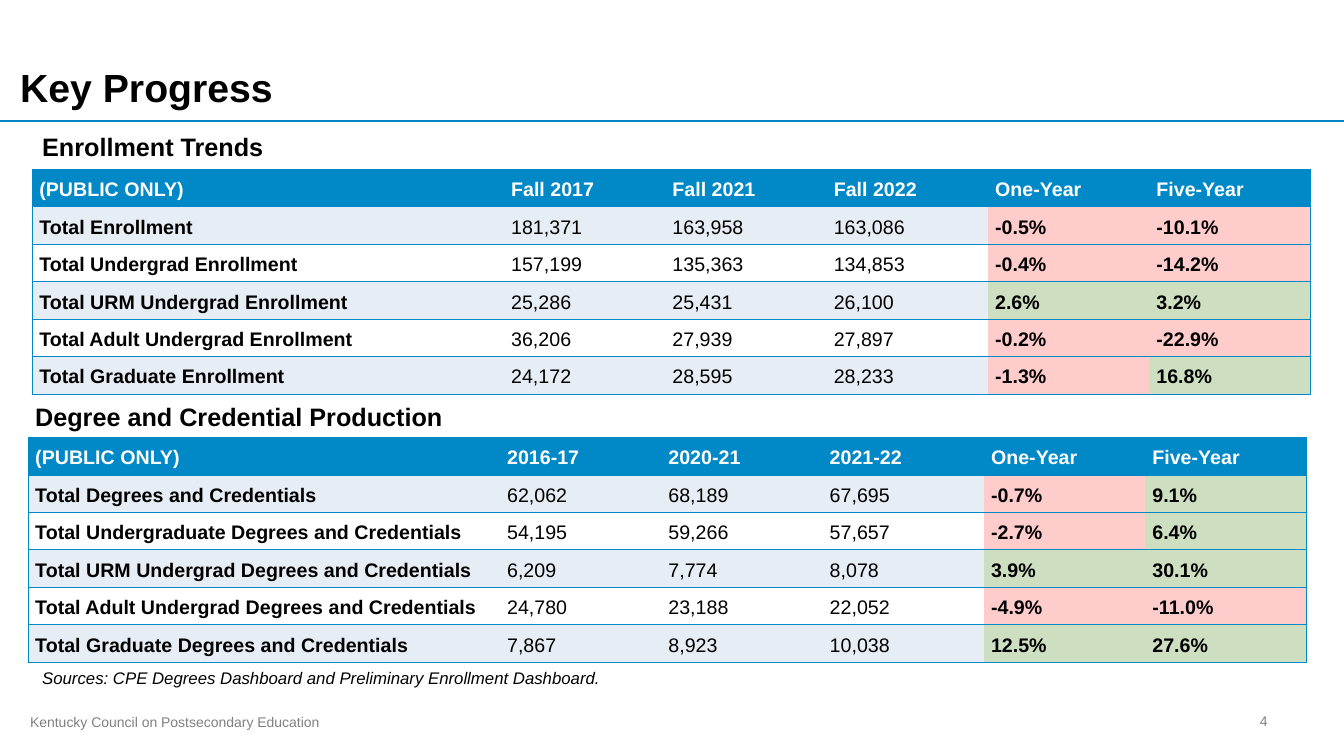
import pptx
import pptx.dml.color
import pptx.enum.shapes
import pptx.enum.text
import pptx.oxml
import pptx.oxml.ns
import pptx.util

Inches = pptx.util.Inches
FONT = "Arial"
SLIDE_WIDTH, SLIDE_HEIGHT = 13.33, 7.5
NO_GRID_STYLE = "{2D5ABB26-0587-4C30-8999-92F81FD0307C}"
COLORS = {
    "rule": "0085C3",
    "header": "0088C7",
    "band": "E7EDF5",
    "plain": "FFFFFF",
    "loss": "FFCCCC",
    "gain": "CEDEC1",
    "text": "000000",
    "header_text": "FFFFFF",
    "footer": "808080",
}
COLUMN_WIDTHS = [4.68] + [1.6] * 5
ROW_HEIGHT = 0.32
CHANGE_COLUMN = 4

ENROLLMENT = [
    ["(PUBLIC ONLY)", "Fall 2017", "Fall 2021", "Fall 2022", "One-Year", "Five-Year"],
    ["Total Enrollment", "181,371", "163,958", "163,086", "-0.5%", "-10.1%"],
    ["Total Undergrad Enrollment", "157,199", "135,363", "134,853", "-0.4%", "-14.2%"],
    ["Total URM Undergrad Enrollment", "25,286", "25,431", "26,100", "2.6%", "3.2%"],
    ["Total Adult Undergrad Enrollment", "36,206", "27,939", "27,897", "-0.2%", "-22.9%"],
    ["Total Graduate Enrollment", "24,172", "28,595", "28,233", "-1.3%", "16.8%"],
]
DEGREES = [
    ["(PUBLIC ONLY)", "2016-17", "2020-21", "2021-22", "One-Year", "Five-Year"],
    ["Total Degrees and Credentials", "62,062", "68,189", "67,695", "-0.7%", "9.1%"],
    ["Total Undergraduate Degrees and Credentials", "54,195", "59,266", "57,657", "-2.7%", "6.4%"],
    ["Total URM Undergrad Degrees and Credentials", "6,209", "7,774", "8,078", "3.9%", "30.1%"],
    ["Total Adult Undergrad Degrees and Credentials", "24,780", "23,188", "22,052", "-4.9%", "-11.0%"],
    ["Total Graduate Degrees and Credentials", "7,867", "8,923", "10,038", "12.5%", "27.6%"],
]


def rgb(name):
    return pptx.dml.color.RGBColor.from_string(COLORS[name])


def add_run(paragraph, text, size, color="text", bold=False, italic=False):
    run = paragraph.add_run()
    run.text = text
    run.font.name = FONT
    run.font.size = pptx.util.Pt(size)
    run.font.bold = bold
    run.font.italic = italic
    run.font.color.rgb = rgb(color)


def add_text(slide, box, text, size, **style):
    shape = slide.shapes.add_textbox(*map(Inches, box))
    shape.text_frame.word_wrap = True
    add_run(shape.text_frame.paragraphs[0], text, size, **style)
    return shape


def add_title(slide, box, text):
    left, top, width, height = box
    title = slide.shapes.title
    title.left, title.top, title.width, title.height = map(Inches, box)
    frame = title.text_frame
    frame.auto_size = pptx.enum.text.MSO_AUTO_SIZE.NONE
    frame.vertical_anchor = pptx.enum.text.MSO_ANCHOR.BOTTOM
    frame.margin_left = frame.margin_right = Inches(0.2)
    frame.margin_top, frame.margin_bottom = Inches(0.05), Inches(0.1)
    paragraph = frame.paragraphs[0]
    paragraph.alignment = pptx.enum.text.PP_ALIGN.LEFT
    add_run(paragraph, text, 28, bold=True)

    bottom = Inches(top + height)
    rule = slide.shapes.add_connector(
        pptx.enum.shapes.MSO_CONNECTOR.STRAIGHT,
        Inches(left), bottom, Inches(left + width), bottom,
    )
    rule.line.color.rgb = rgb("rule")
    rule.line.width = pptx.util.Pt(1.5)
    properties = rule._element.spPr
    properties.append(pptx.oxml.parse_xml(f'<a:effectLst {pptx.oxml.ns.nsdecls("a")}/>'))


def set_borders(cell, sides):
    properties = cell._tc.get_or_add_tcPr()
    for index, side in enumerate(sides):
        properties.insert(index, pptx.oxml.parse_xml(
            f'<a:ln{side} {pptx.oxml.ns.nsdecls("a")} w="12700"><a:solidFill>'
            f'<a:srgbClr val="{COLORS["header"]}"/></a:solidFill></a:ln{side}>'
        ))


def cell_fill(row, column, text):
    if row == 0:
        return "header"
    if column >= CHANGE_COLUMN:
        return "loss" if text.startswith("-") else "gain"
    return "band" if row % 2 else "plain"


def format_cell(cell, row, column, text):
    cell.margin_left = cell.margin_right = Inches(0.07)
    cell.margin_top = cell.margin_bottom = Inches(0.04)
    cell.fill.solid()
    cell.fill.fore_color.rgb = rgb(cell_fill(row, column, text))
    sides = ["T", "B"]
    if column == 0:
        sides.insert(0, "L")
    elif column == len(COLUMN_WIDTHS) - 1:
        sides.insert(0, "R")
    set_borders(cell, sides)
    paragraph = cell.text_frame.paragraphs[0]
    paragraph.line_spacing = 1.25
    add_run(
        paragraph, text, 14,
        color="text" if row else "header_text",
        bold=row == 0 or column == 0 or column >= CHANGE_COLUMN,
    )


def add_trend_table(slide, box, records):
    frame = slide.shapes.add_table(len(records), len(COLUMN_WIDTHS), *map(Inches, box))
    table = frame.table
    table.horz_banding = False
    style = table._tbl.tblPr.find(pptx.oxml.ns.qn("a:tableStyleId"))
    style.text = NO_GRID_STYLE
    for column, width in zip(table.columns, COLUMN_WIDTHS):
        column.width = Inches(width)
    for row_index, record in enumerate(records):
        table.rows[row_index].height = Inches(ROW_HEIGHT)
        for column_index, text in enumerate(record):
            format_cell(table.cell(row_index, column_index), row_index, column_index, text)


def add_footer(slide, box, text, number):
    left, top, width, height = box
    add_text(slide, (left, top + 0.08, 8.5, 0.27), text, 10, color="footer")
    number_width = 0.56
    shape = add_text(
        slide, (left + width - number_width, top, number_width, height),
        number, 10, color="footer",
    )
    shape.text_frame.vertical_anchor = pptx.enum.text.MSO_ANCHOR.MIDDLE
    shape.text_frame.paragraphs[0].alignment = pptx.enum.text.PP_ALIGN.RIGHT


def build_progress_slide(presentation):
    slide = presentation.slides.add_slide(presentation.slide_layouts[5])
    add_title(slide, (0, 0, SLIDE_WIDTH, 1.2), "Key Progress")
    table_size = (sum(COLUMN_WIDTHS), ROW_HEIGHT * len(ENROLLMENT))
    add_text(slide, (0.32, 1.25, 4.68, 0.4), "Enrollment Trends", 18, bold=True)
    add_trend_table(slide, (0.32, 1.68, *table_size), ENROLLMENT)
    add_text(slide, (0.25, 3.93, 4.68, 0.4), "Degree and Credential Production", 18, bold=True)
    add_trend_table(slide, (0.28, 4.34, *table_size), DEGREES)
    add_text(
        slide, (0.32, 6.58, 12.7, 0.3),
        "Sources: CPE Degrees Dashboard and Preliminary Enrollment Dashboard.",
        12, italic=True,
    )
    add_footer(slide, (0.2, 6.95, 12.47, 0.4), "Kentucky Council on Postsecondary Education", "4")


def main():
    presentation = pptx.Presentation()
    presentation.slide_width = Inches(SLIDE_WIDTH)
    presentation.slide_height = Inches(SLIDE_HEIGHT)
    build_progress_slide(presentation)
    presentation.save("out.pptx")


if __name__ == "__main__":
    main()
